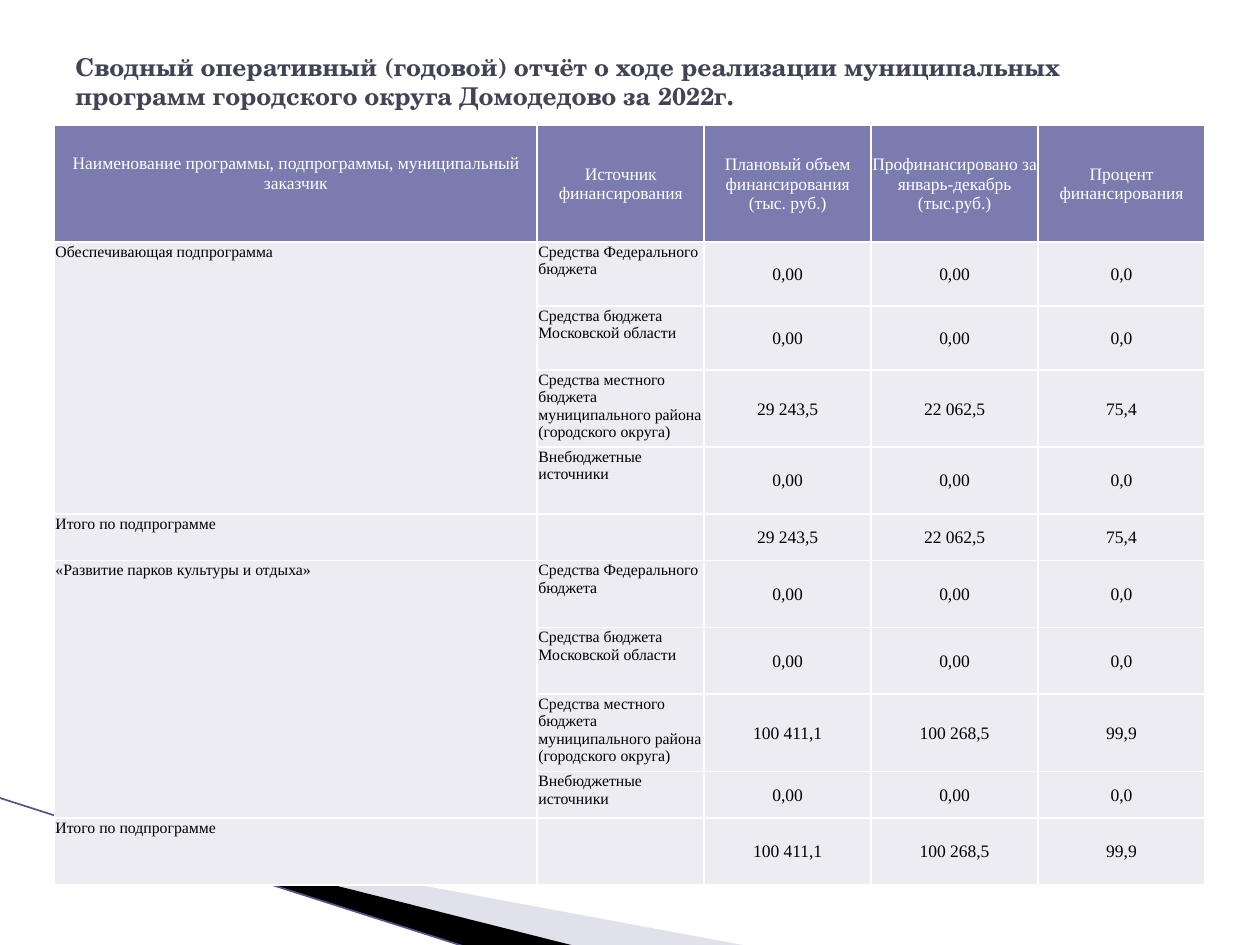
from lxml.etree import SubElement
from pptx import Presentation
from pptx.dml.color import RGBColor
from pptx.enum.shapes import MSO_CONNECTOR
from pptx.enum.text import MSO_ANCHOR as Anchor, PP_ALIGN as Align
from pptx.oxml import parse_xml
from pptx.oxml.ns import nsdecls, qn
from pptx.util import Pt

TITLE = ("Сводный оперативный (годовой) отчёт о ходе реализации муниципальных "
         "программ городского округа Домодедово за 2022г.")
HEADINGS = ("Наименование программы, подпрограммы, муниципальный заказчик",
            "Источник финансирования",
            "Плановый объем финансирования (тыс. руб.)",
            "Профинансировано за январь-декабрь (тыс.руб.)",
            "Процент финансирования")
SOURCES = ("Средства Федерального бюджета",
           "Средства бюджета Московской области",
           "Средства местного бюджета муниципального района (городского округа)",
           "Внебюджетные источники")
TOTAL = "Итого по подпрограмме"
LOCAL_SOURCE = 2
NOTHING = ("0,00", "0,00", "0,0")
# Only the local budget finances the subprogrammes, so it equals the total
SUBPROGRAMMES = (
    ("Обеспечивающая подпрограмма", ("29 243,5", "22 062,5", "75,4")),
    ("«Развитие парков культуры и отдыха»", ("100 411,1", "100 268,5", "99,9")),
)

THEME = {
    "title": "424456", "header": "7A7BAE", "body": "ECECF2", "white": "FFFFFF",
    "text": "000000", "pale": "B6B6D1", "black": "000000", "line": "53548A",
    "title_font": "TeX Gyre Schola", "table_font": "Times New Roman",
    "title_size": 14, "value_size": 10, "label_size": 9,
}

TABLE_LEFT, TABLE_TOP = 31, 71.5
COLUMN_WIDTHS = (276, 95.4, 95.4, 95.4, 95.4)
ROW_HEIGHTS = (66.8, 36.6, 36.6, 36.6, 38.2, 26.7, 38.2, 38.2, 38.2, 26.7, 38.2)
CELL_INSETS = {"margin_left": 0.7, "margin_right": 0.7,
               "margin_top": 0.7, "margin_bottom": 0}
HEADER_GAP = 12

PALE_WEDGE = ((39.6, 468.5), (428.4, 540.7), (328.3, 540.7), (39.6, 468))
BLACK_WEDGE = ((38.2, 467.3), (329, 540.7), (267.8, 541.4), (38.9, 468))
EDGE_LINE = (-0.7, 455.8, 267.1, 541.4)


def colour(name):
    return RGBColor.from_string(THEME[name])


def style_text(paragraph, font, size, text_colour, bold=False):
    for run in paragraph.runs:
        for attribute, setting in {"name": font, "size": Pt(size), "bold": bold}.items():
            setattr(run.font, attribute, setting)
        run.font.color.rgb = colour(text_colour)


def add_wedge(shapes, corners, fill, opacity=None):
    points = [(Pt(x), Pt(y)) for x, y in corners]
    builder = shapes.build_freeform(*points[0])
    builder.add_line_segments(points[1:], close=True)
    wedge = builder.convert_to_shape()
    wedge.shadow.inherit = False
    wedge.line.fill.background()
    wedge.fill.solid()
    wedge.fill.fore_color.rgb = colour(fill)
    if opacity is not None:
        rgb = wedge.fill._xPr.find(qn("a:solidFill"))[0]
        SubElement(rgb, qn("a:alpha"), val=str(opacity * 1000))


def add_edge_line(shapes):
    edge = shapes.add_connector(MSO_CONNECTOR.STRAIGHT, *map(Pt, EDGE_LINE))
    edge.line.color.rgb = colour("line")
    edge.line.width = Pt(0.95)
    SubElement(edge._element.spPr, qn("a:effectLst"))


def add_title(shapes):
    frame = shapes.add_textbox(Pt(36), Pt(21.6), Pt(648), Pt(49.7)).text_frame
    frame.word_wrap = True
    frame.vertical_anchor = Anchor.MIDDLE
    frame.text = TITLE
    style_text(frame.paragraphs[0], THEME["title_font"], THEME["title_size"], "title", True)


def add_borders(cell):
    properties = cell._tc.get_or_add_tcPr()
    for position, side in enumerate("LRTB"):
        properties.insert(position, parse_xml(
            f'<a:ln{side} {nsdecls("a")} w="{Pt(1)}"><a:solidFill>'
            f'<a:srgbClr val="{THEME["white"]}"/></a:solidFill></a:ln{side}>'))


def fill_cell(cell, words, is_header, is_label):
    for side, inset in CELL_INSETS.items():
        setattr(cell, side, Pt(inset))
    cell.fill.solid()
    cell.fill.fore_color.rgb = colour("header" if is_header else "body")
    add_borders(cell)
    cell.text = words
    cell.vertical_anchor = Anchor.TOP if is_label else Anchor.MIDDLE
    paragraph = cell.text_frame.paragraphs[0]
    paragraph.alignment = Align.LEFT if is_label else Align.CENTER
    style_text(paragraph, THEME["table_font"],
               THEME["label_size" if is_label else "value_size"],
               "white" if is_header else "text")


def table_rows():
    rows = [HEADINGS]
    for programme, amounts in SUBPROGRAMMES:
        for number, source in enumerate(SOURCES):
            rows.append((programme if number == 0 else "", source,
                         *(amounts if number == LOCAL_SOURCE else NOTHING)))
        rows.append((TOTAL, "", *amounts))
    return rows


def add_report(shapes):
    rows = table_rows()
    table = shapes.add_table(len(rows), len(HEADINGS), Pt(TABLE_LEFT), Pt(TABLE_TOP),
                             Pt(sum(COLUMN_WIDTHS)), Pt(sum(ROW_HEIGHTS))).table
    table.horz_banding = False
    for column, width in zip(table.columns, COLUMN_WIDTHS):
        column.width = Pt(width)
    for row, height in zip(table.rows, ROW_HEIGHTS):
        row.height = Pt(height)
    for r, row in enumerate(rows):
        for c, words in enumerate(row):
            fill_cell(table.cell(r, c), words, r == 0, r > 0 and c < 2)
    table.cell(0, 0).margin_bottom = Pt(HEADER_GAP)
    block = len(SOURCES) + 1
    for first in range(1, len(rows), block):
        table.cell(first, 0).merge(table.cell(first + len(SOURCES) - 1, 0))


def main():
    presentation = Presentation()
    presentation.slide_width, presentation.slide_height = Pt(720), Pt(540)
    shapes = presentation.slides.add_slide(presentation.slide_layouts[6]).shapes
    add_wedge(shapes, PALE_WEDGE, "pale", opacity=40)
    add_wedge(shapes, BLACK_WEDGE, "black")
    add_edge_line(shapes)
    add_title(shapes)
    add_report(shapes)
    presentation.save("out.pptx")


if __name__ == "__main__":
    main()
